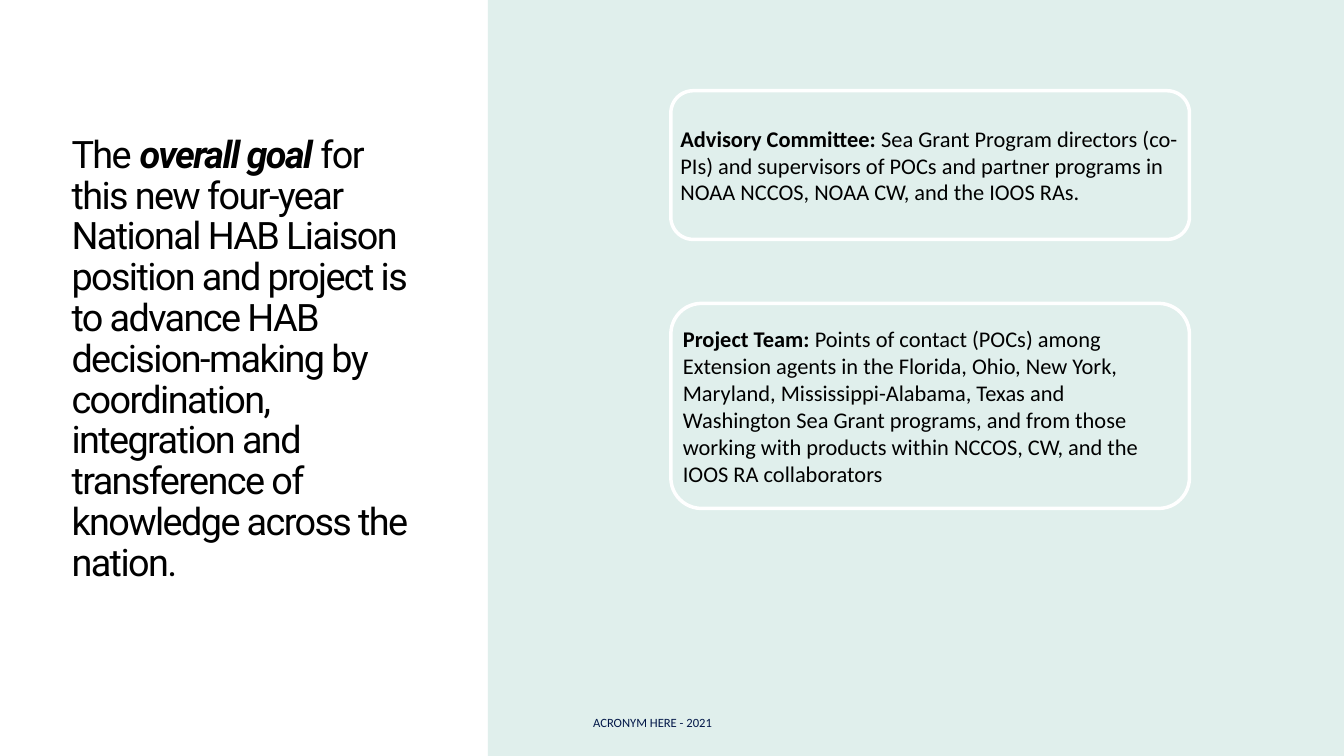
from lxml.etree import SubElement
from pptx import Presentation
from pptx.dml.color import RGBColor
from pptx.enum.shapes import MSO_SHAPE
from pptx.enum.text import MSO_ANCHOR, MSO_AUTO_SIZE, PP_ALIGN
from pptx.oxml.ns import qn
from pptx.util import Pt

# Runs are (text, format)
GOAL = [
    ("The ", {}),
    ("overall goal ", {"bold": True, "italic": True}),
    ("for this new four-year National HAB Liaison position and project is to "
     "advance HAB decision-making by coordination, integration and "
     "transference of knowledge across the nation.", {}),
]
# Groups are (heading, description, top, height)
GROUPS = [
    ("Advisory Committee:",
     " Sea Grant Program directors (co-PIs) and supervisors of POCs and "
     "partner programs in NOAA NCCOS, NOAA CW, and the IOOS RAs.", 129.6, 212.4),
    ("Project Team:",
     " Points of contact (POCs) among Extension agents in the Florida, Ohio, "
     "New York, Maryland, Mississippi-Alabama, Texas and Washington Sea Grant "
     "programs, and from those working with products within NCCOS, CW, and "
     "the IOOS RA collaborators", 433.4, 293),
]
FOOTER = "ACRONYM HERE - 2021"

GROUP_LEFT, GROUP_WIDTH = 958.3, 740.9
INSET = 4.3
TITLE_LINE = 58.3


def color(value):
    return RGBColor.from_string(value)


def place(sp, left, top, width, height):
    sp.left, sp.top, sp.width, sp.height = map(Pt, (left, top, width, height))


def set_frame(tf, left, top, right, bottom, wrap=True, fit=MSO_AUTO_SIZE.NONE):
    values = {"margin_left": Pt(left), "margin_top": Pt(top),
              "margin_right": Pt(right), "margin_bottom": Pt(bottom),
              "word_wrap": wrap, "auto_size": fit,
              "vertical_anchor": MSO_ANCHOR.MIDDLE}
    for name, value in values.items():
        setattr(tf, name, value)


def add_runs(p, runs, font, size, fill="000000", spacing=None):
    p.alignment = PP_ALIGN.LEFT
    for text, fmt in runs:
        r = p.add_run()
        r.text = text
        base = {"name": font, "size": Pt(size), "bold": False, "italic": False}
        for name, value in {**base, **fmt}.items():
            setattr(r.font, name, value)
        r.font.color.rgb = color(fill)
        if spacing is not None:
            r.font._element.set("spc", str(round(spacing * 100)))


def add_panel(s):
    sp = s.shapes.add_shape(MSO_SHAPE.RECTANGLE, Pt(697), Pt(-15), Pt(1245), Pt(1110))
    sp.shadow.inherit = False
    sp.line.fill.background()
    sp.fill.solid()
    sp.fill.fore_color.rgb = color("A2D1C7")
    srgb = sp._element.spPr.find(qn("a:solidFill")).find(qn("a:srgbClr"))
    SubElement(srgb, qn("a:alpha"), val="33000")


def add_group(s, heading, description, top, height):
    sp = s.shapes.add_shape(MSO_SHAPE.ROUNDED_RECTANGLE, Pt(GROUP_LEFT), Pt(top),
                            Pt(GROUP_WIDTH), Pt(height))
    sp.adjustments[0] = 0.15
    sp.shadow.inherit = False
    sp.fill.background()
    sp.line.color.rgb = color("FFFFFF")
    sp.line.width = Pt(5)
    set_frame(sp.text_frame, *[INSET] * 4)
    add_runs(sp.text_frame.paragraphs[0],
             [(heading, {"bold": True}), (description, {})], "Calibri", 32)


def main():
    prs = Presentation()
    prs.slide_width, prs.slide_height = Pt(1920), Pt(1080)
    s = prs.slides.add_slide(prs.slide_layouts[5])
    s.background.fill.solid()
    s.background.fill.fore_color.rgb = color("FFFFFF")

    add_panel(s)
    for group in GROUPS:
        add_group(s, *group)

    footer = s.shapes.add_textbox(Pt(843), Pt(1010), Pt(234), Pt(43))
    set_frame(footer.text_frame, *[INSET] * 4, wrap=False,
              fit=MSO_AUTO_SIZE.SHAPE_TO_FIT_TEXT)
    add_runs(footer.text_frame.paragraphs[0], [(FOOTER, {})], "Calibri", 18, "021748")

    title = s.shapes.title
    place(title, 95, 360.7, 505.4, 365.8)
    # One extra line of bottom margin lifts the centred text by half a line
    set_frame(title.text_frame, 7.2, 3.6, 7.2, 3.6 + TITLE_LINE)
    p = title.text_frame.paragraphs[0]
    p.line_spacing = 0.9
    add_runs(p, GOAL, "Roboto", 54, spacing=-2.3)

    prs.save("out.pptx")


if __name__ == "__main__":
    main()
